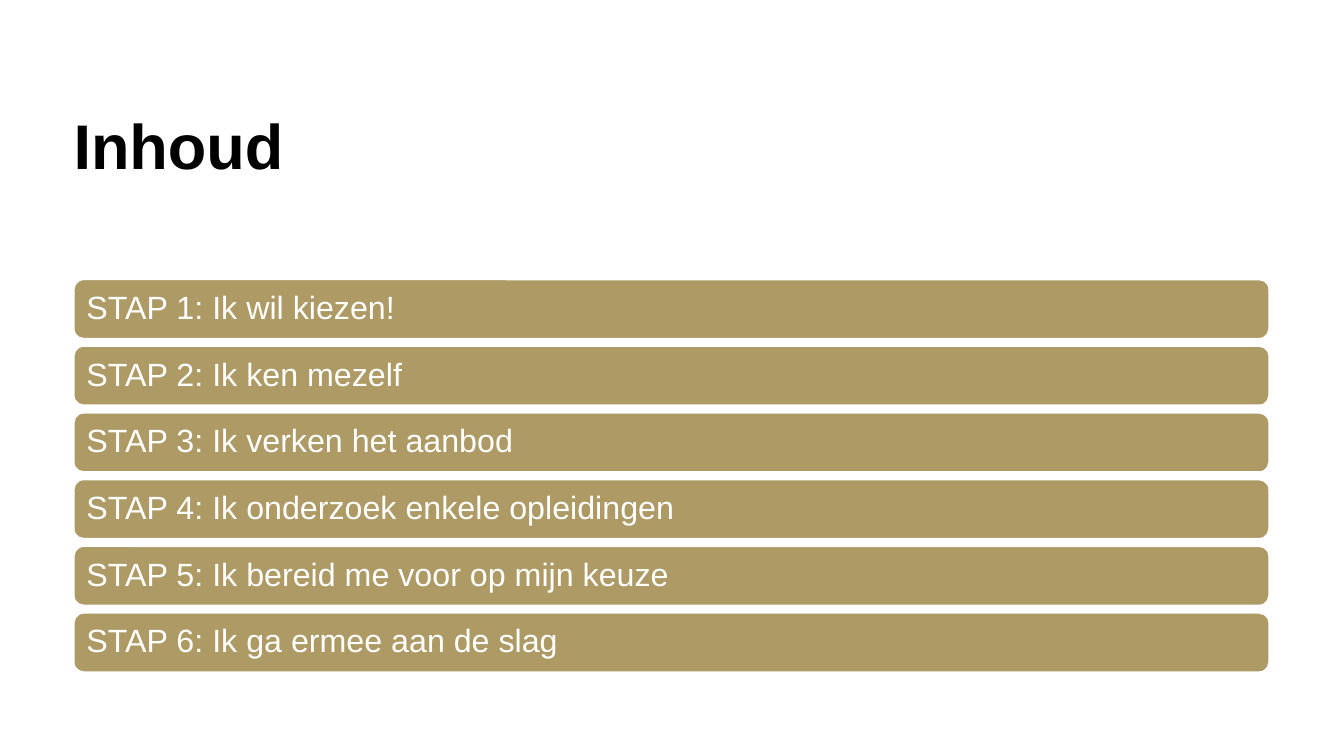
import pptx
import pptx.dml.color
import pptx.enum.shapes
import pptx.enum.text
import pptx.util

Inches = pptx.util.Inches
Pt = pptx.util.Pt
COLORS = {"title": "000000", "bar": "AD9A64", "white": "FFFFFF"}
STEPS = [
    "Ik wil kiezen!",
    "Ik ken mezelf",
    "Ik verken het aanbod",
    "Ik onderzoek enkele opleidingen",
    "Ik bereid me voor op mijn keuze",
    "Ik ga ermee aan de slag",
]


def rgb(name):
    """Return the named colour."""
    return pptx.dml.color.RGBColor.from_string(COLORS[name])


def set_text(sp, text, size, color, margin, spacing, anchor, bold=False):
    """Write one left-aligned line of text in a shape."""
    tf = sp.text_frame
    tf.text = text
    tf.word_wrap = True
    tf.vertical_anchor = anchor
    tf.margin_left = tf.margin_right = Inches(margin)
    tf.margin_top = tf.margin_bottom = Inches(margin)
    p = tf.paragraphs[0]
    p.alignment = pptx.enum.text.PP_ALIGN.LEFT
    p.line_spacing = spacing
    r = p.runs[0]
    r.font.name = "Arial"
    r.font.size = Pt(size)
    r.font.bold = bold
    r.font.color.rgb = rgb(color)


def add_title(s, text, left, top, width, height):
    """Place the slide title in the given box."""
    sp = s.shapes.add_textbox(Inches(left), Inches(top), Inches(width), Inches(height))
    set_text(sp, text, 45, "title", 0, 0.85, pptx.enum.text.MSO_ANCHOR.TOP, bold=True)


def add_steps(s, steps, left, top, width, height, gap=0.07):
    """Stack one numbered bar per step, filling the given box."""
    bar_height = (height - gap * (len(steps) - 1)) / len(steps)
    for i, step in enumerate(steps):
        sp = s.shapes.add_shape(
            pptx.enum.shapes.MSO_SHAPE.ROUNDED_RECTANGLE,
            Inches(left), Inches(top + i * (bar_height + gap)),
            Inches(width), Inches(bar_height))
        sp.shadow.inherit = False
        sp.fill.solid()
        sp.fill.fore_color.rgb = rgb("bar")
        sp.line.color.rgb = rgb("white")
        sp.line.width = Pt(1.5)
        set_text(sp, f"STAP {i + 1}: {step}", 23, "white", 0.1, 0.9,
                 pptx.enum.text.MSO_ANCHOR.MIDDLE)


def main():
    """Build and save the contents slide."""
    prs = pptx.Presentation()
    prs.slide_width = Inches(13.33)
    prs.slide_height = Inches(7.5)
    s = prs.slides.add_slide(prs.slide_layouts[6])
    add_title(s, "Inhoud", 0.73, 1.17, 5.93, 1.3)
    add_steps(s, STEPS, 0.73, 2.77, 11.86, 3.9)
    prs.save("out.pptx")


if __name__ == "__main__":
    main()
